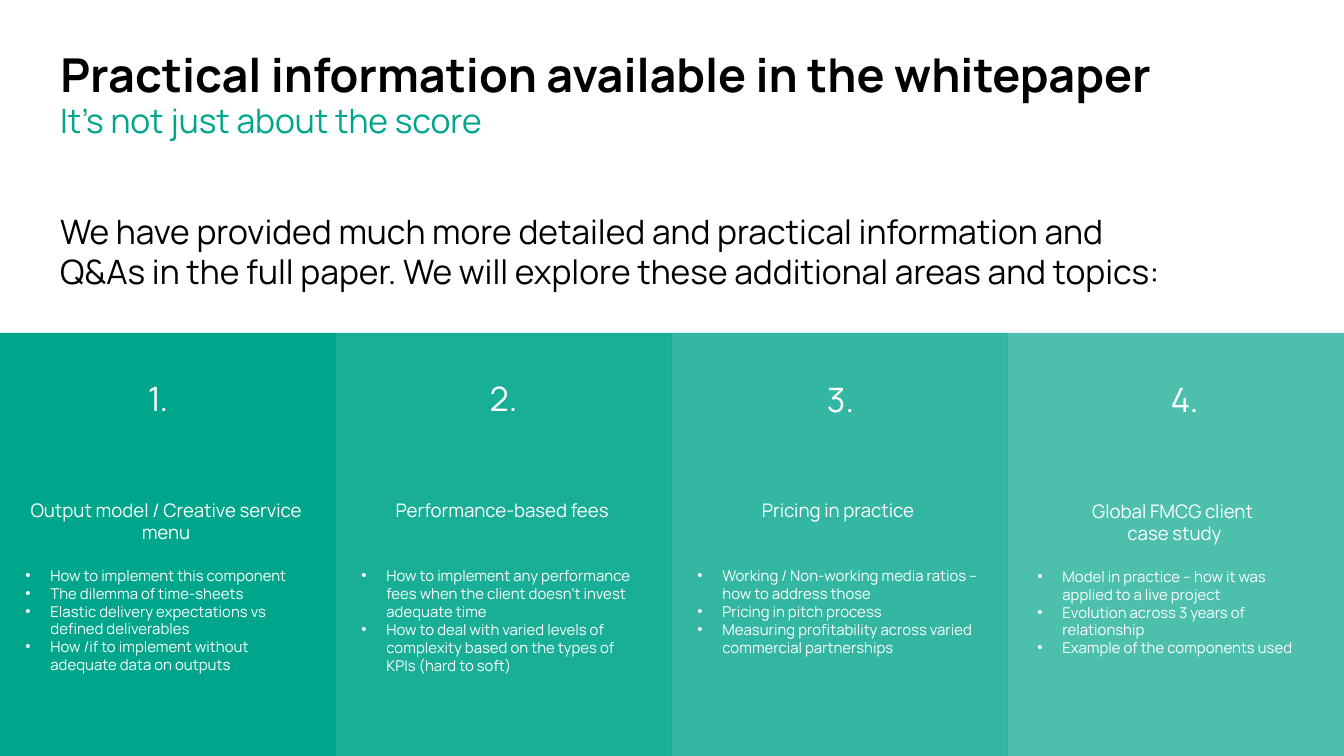
from dataclasses import dataclass

from lxml import etree
from pptx import Presentation
from pptx import util as u
from pptx.dml.color import RGBColor
from pptx.enum import shapes, text
from pptx.oxml import ns

SCALE = 9144000 / 1344  # EMU per px
W, H = 1344, 756
FONT = "Manrope"
COLORS = {"green": "00A68B", "black": "000000", "white": "FFFFFF"}
PANEL_W, PANEL_TOP = W // 4, 333
INDENT = 25
BLANK_LINE = 12.2  # pt, one line of heading text
LEFT, CENTER = text.PP_ALIGN.LEFT, text.PP_ALIGN.CENTER


@dataclass(frozen=True)
class Box:
    x: int
    y: int
    w: int
    h: int


@dataclass(frozen=True)
class Topic:
    heading: str
    bullets: tuple[str, ...]
    gap_lines: int  # lines between heading and list
    number: Box
    body: Box
    alpha: int  # panel opacity in percent


TOPICS = [
    Topic("Output model / Creative service menu",
          ("How to implement this component",
           "The dilemma of time-sheets",
           "Elastic delivery expectations vs defined deliverables",
           "How /if to implement without adequate data on outputs"),
          1, Box(132, 371, 52, 54), Box(12, 492, 308, 190), 100),
    Topic("Performance-based fees",
          ("How to implement any performance fees when the client doesn’t invest adequate time",
           "How to deal with varied levels of complexity based on the types of KPIs (hard to soft)"),
          2, Box(476, 371, 55, 54), Box(348, 492, 308, 212), 90),
    Topic("Pricing in practice",
          ("Working / Non-working media ratios – how to address those",
           "Pricing in pitch process",
           "Measuring profitability across varied commercial partnerships"),
          2, Box(813, 372, 55, 54), Box(684, 492, 308, 172), 80),
    Topic("Global FMCG client \vcase study",
          ("Model in practice – how it was applied to a live project",
           "Evolution across 3 years of relationship",
           "Example of the components used"),
          1, Box(1157, 372, 55, 54), Box(1024, 493, 301, 195), 70),
]


def px(n: int) -> u.Emu:
    return u.Emu(round(n * SCALE))


def rgb(name: str) -> RGBColor:
    return RGBColor.from_string(COLORS[name])


def set_all(obj, values: dict) -> None:
    for name, value in values.items():
        setattr(obj, name, value)


def place(sp, box: Box, wrap: bool = True):
    set_all(sp, {"left": px(box.x), "top": px(box.y),
                 "width": px(box.w), "height": px(box.h)})
    tf = sp.text_frame
    set_all(tf, {"word_wrap": wrap, "auto_size": text.MSO_AUTO_SIZE.NONE,
                 "vertical_anchor": text.MSO_ANCHOR.TOP})
    return tf


def write(p, words: str, size: int, color: str, align=LEFT,
          bold: bool = False, before: float = 0) -> None:
    p.text = words
    set_all(p, {"alignment": align, "space_before": u.Pt(before)})
    for r in p.runs:
        set_all(r.font, {"name": FONT, "size": u.Pt(size), "bold": bold})
        r.font.color.rgb = rgb(color)


def set_bullet(p, char: str = "") -> None:
    pPr = p._p.get_or_add_pPr()
    indent = px(INDENT) if char else 0
    pPr.set("marL", str(indent))
    pPr.set("indent", str(-indent))
    if char:
        etree.SubElement(pPr, ns.qn("a:buChar")).set("char", char)
    else:
        etree.SubElement(pPr, ns.qn("a:buNone"))


def add_label(s, box: Box, words: str, size: int, color: str,
              align=LEFT, wrap: bool = False) -> None:
    tf = place(s.shapes.add_textbox(0, 0, 0, 0), box, wrap)
    write(tf.paragraphs[0], words, size, color, align)


def add_panel(s, i: int, alpha: int) -> None:
    sp = s.shapes.add_shape(shapes.MSO_SHAPE.RECTANGLE, px(i * PANEL_W), px(PANEL_TOP),
                            px(PANEL_W), px(H - PANEL_TOP))
    sp.shadow.inherit = False
    sp.line.fill.background()
    sp.fill.solid()
    sp.fill.fore_color.rgb = rgb("green")
    if alpha < 100:
        clr = sp._element.spPr.find(".//" + ns.qn("a:srgbClr"))
        etree.SubElement(clr, ns.qn("a:alpha")).set("val", str(alpha * 1000))
    s.shapes._spTree.insert(2, sp._element)  # behind the text


def fill_topic(sp, topic: Topic) -> None:
    tf = place(sp, topic.body)
    p = tf.paragraphs[0]
    write(p, topic.heading, 10, "white", CENTER)
    set_bullet(p)
    for i, words in enumerate(topic.bullets):
        p = tf.add_paragraph()
        write(p, words, 8, "white", before=0 if i else topic.gap_lines * BLANK_LINE)
        set_bullet(p, "•")


def main() -> None:
    prs = Presentation()
    set_all(prs, {"slide_width": px(W), "slide_height": px(H)})
    s = prs.slides.add_slide(prs.slide_layouts[4])  # title and four bodies
    title, *bodies = s.placeholders

    # Title, subtitle and introduction
    tf = place(title, Box(47, 39, 1150, 70), wrap=False)
    write(tf.paragraphs[0], "Practical information available in the whitepaper",
          25, "black", bold=True)
    add_label(s, Box(47, 93, 476, 54), "It’s not just about the score", 18, "green")
    add_label(s, Box(47, 204, 1150, 136),
              "We have provided much more detailed and practical information and "
              "Q&As in the full paper. We will explore these additional areas and topics:",
              18, "black", wrap=True)

    # Four topic columns
    for i, (topic, body) in enumerate(zip(TOPICS, bodies)):
        add_panel(s, i, topic.alpha)
        add_label(s, topic.number, f"{i + 1}.", 18, "white", CENTER)
        fill_topic(body, topic)

    prs.save("out.pptx")


if __name__ == "__main__":
    main()
